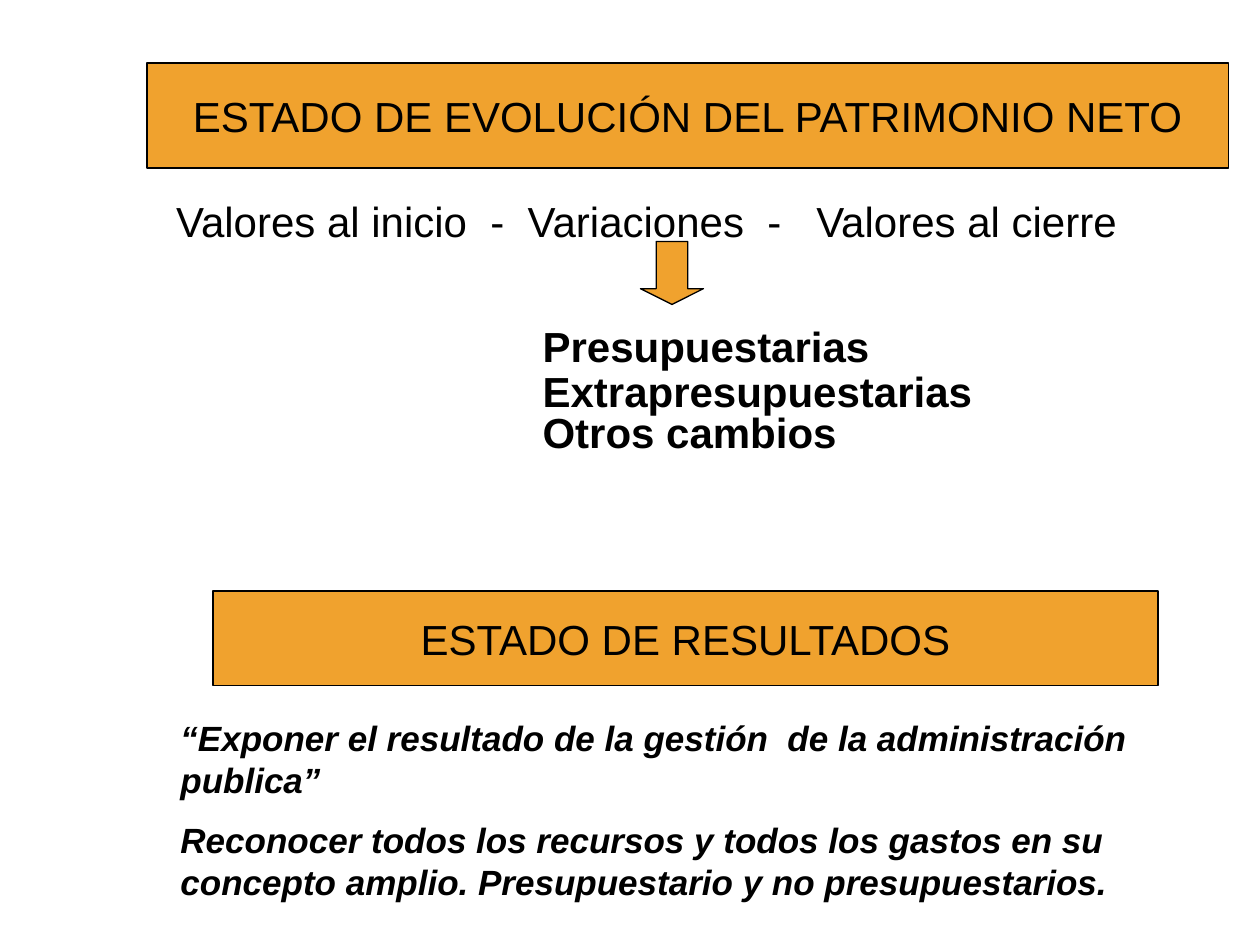
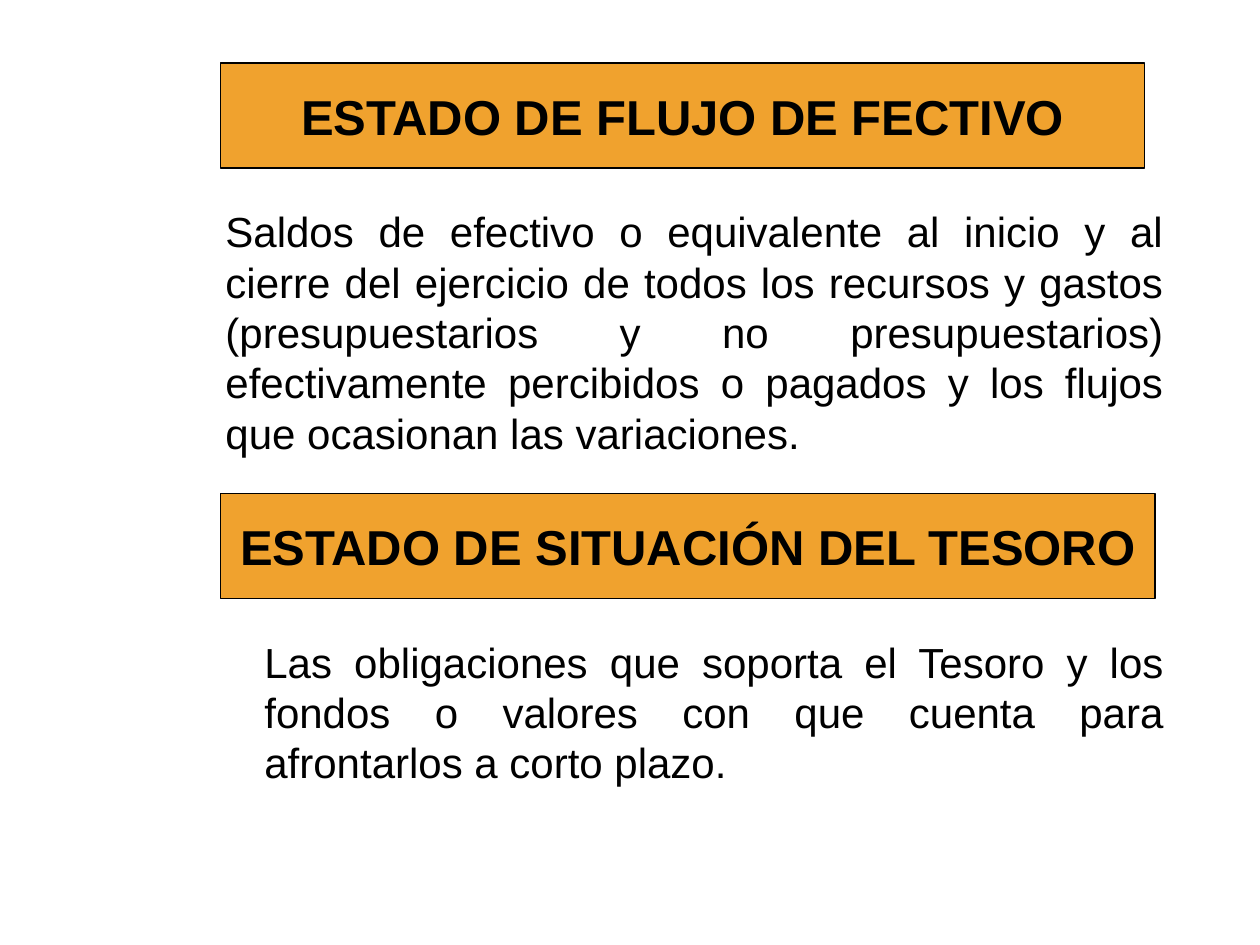
from dataclasses import dataclass

import pptx
import pptx.dml.color
import pptx.enum.shapes
import pptx.enum.text
import pptx.util

Pt = pptx.util.Pt
SHAPE = pptx.enum.shapes.MSO_SHAPE
ALIGN = pptx.enum.text.PP_ALIGN


# Shared look
@dataclass(frozen=True)
class Theme:
    font: str = "Arial"
    ink: pptx.dml.color.RGBColor = pptx.dml.color.RGBColor(0, 0, 0)
    accent: pptx.dml.color.RGBColor = pptx.dml.color.RGBColor(0xF0, 0xA2, 0x2E)
    outline: float = 0.75
    title: int = 28
    body: int = 24
    quote: int = 20
    leading: float = 1.2
    tight: float = 0.4
    gap: float = 0.5


THEME = Theme()


def style_paragraph(p, size, bold=False, italic=False, align=ALIGN.LEFT):
    p.alignment = align
    for r in p.runs:
        r.font.name = THEME.font
        r.font.size = Pt(size)
        r.font.bold = bold
        r.font.italic = italic
        r.font.color.rgb = THEME.ink


def add_block(s, kind, x, y, w, h):
    """Accent-coloured shape with a thin outline."""
    sp = s.shapes.add_shape(kind, Pt(x), Pt(y), Pt(w), Pt(h))
    sp.shadow.inherit = False
    sp.fill.solid()
    sp.fill.fore_color.rgb = THEME.accent
    sp.line.color.rgb = THEME.ink
    sp.line.width = Pt(THEME.outline)
    return sp


def add_band(s, text, x, y, w, h=60, size=THEME.title, bold=True):
    """Heading band with one centred line."""
    tf = add_block(s, SHAPE.RECTANGLE, x, y, w, h).text_frame
    tf.text = text
    tf.word_wrap = False
    tf.vertical_anchor = pptx.enum.text.MSO_ANCHOR.MIDDLE
    style_paragraph(tf.paragraphs[0], size, bold, align=ALIGN.CENTER)


def add_down_arrow(s, x, y, side):
    sp = add_block(s, SHAPE.DOWN_ARROW, x, y, side, side)
    sp.adjustments[0] = 0.5
    sp.adjustments[1] = 0.25


def add_text(s, lines, x, y, w, h, size=THEME.body, tight=False, **style):
    """Text box; paragraphs after the first are set apart, and tight if asked."""
    tf = s.shapes.add_textbox(Pt(x), Pt(y), Pt(w), Pt(h)).text_frame
    tf.text = "\n".join(lines)
    tf.word_wrap = True
    tf.auto_size = pptx.enum.text.MSO_AUTO_SIZE.SHAPE_TO_FIT_TEXT
    for i, p in enumerate(tf.paragraphs):
        style_paragraph(p, size, **style)
        p.line_spacing = Pt(size * THEME.leading)
        if i:
            p.space_before = Pt(size * THEME.gap)
            if tight:
                p.line_spacing = THEME.tight


# Slides
def add_equity_and_results(s):
    add_band(s, "ESTADO DE EVOLUCIÓN DEL PATRIMONIO NETO", 84, 36, 618,
             size=THEME.body, bold=False)
    add_text(s, ["Valores al inicio  -  Variaciones  -   Valores al cierre"],
             93.6, 108, 601, 36)
    add_down_arrow(s, 366, 138, 36)
    add_text(s, ["Presupuestarias", "Extrapresupuestarias", "Otros cambios"],
             303, 179.5, 266.5, 88, tight=True, bold=True)

    add_band(s, "ESTADO DE RESULTADOS", 121.75, 337.75, 540, 54,
             size=THEME.body, bold=False)
    add_text(s, ["“Exponer el resultado de la gestión  de la administración publica”",
                 "Reconocer todos los recursos y todos los gastos en su concepto "
                 "amplio. Presupuestario y no presupuestarios."],
             96, 406, 624, 115, size=THEME.quote, bold=True, italic=True)


def add_cash_and_treasury(s):
    add_band(s, "ESTADO DE FLUJO DE FECTIVO", 126, 36, 528)
    add_text(s, ["Saldos de efectivo o equivalente al inicio y al cierre del "
                 "ejercicio de todos los recursos y gastos (presupuestarios y no "
                 "presupuestarios) efectivamente percibidos o pagados y los flujos "
                 "que ocasionan las variaciones."],
             121.75, 114, 550, 151, align=ALIGN.JUSTIFY)

    add_band(s, "ESTADO DE SITUACIÓN DEL TESORO", 126, 282, 534)
    add_text(s, ["Las obligaciones que soporta el Tesoro y los fondos o valores "
                 "con que cuenta para afrontarlos a corto plazo."],
             144, 360, 528, 94, align=ALIGN.JUSTIFY)


def main():
    prs = pptx.Presentation()
    prs.slide_width, prs.slide_height = Pt(720), Pt(540)
    for build in (add_equity_and_results, add_cash_and_treasury):
        build(prs.slides.add_slide(prs.slide_layouts[6]))
    prs.save("out.pptx")


if __name__ == "__main__":
    main()
